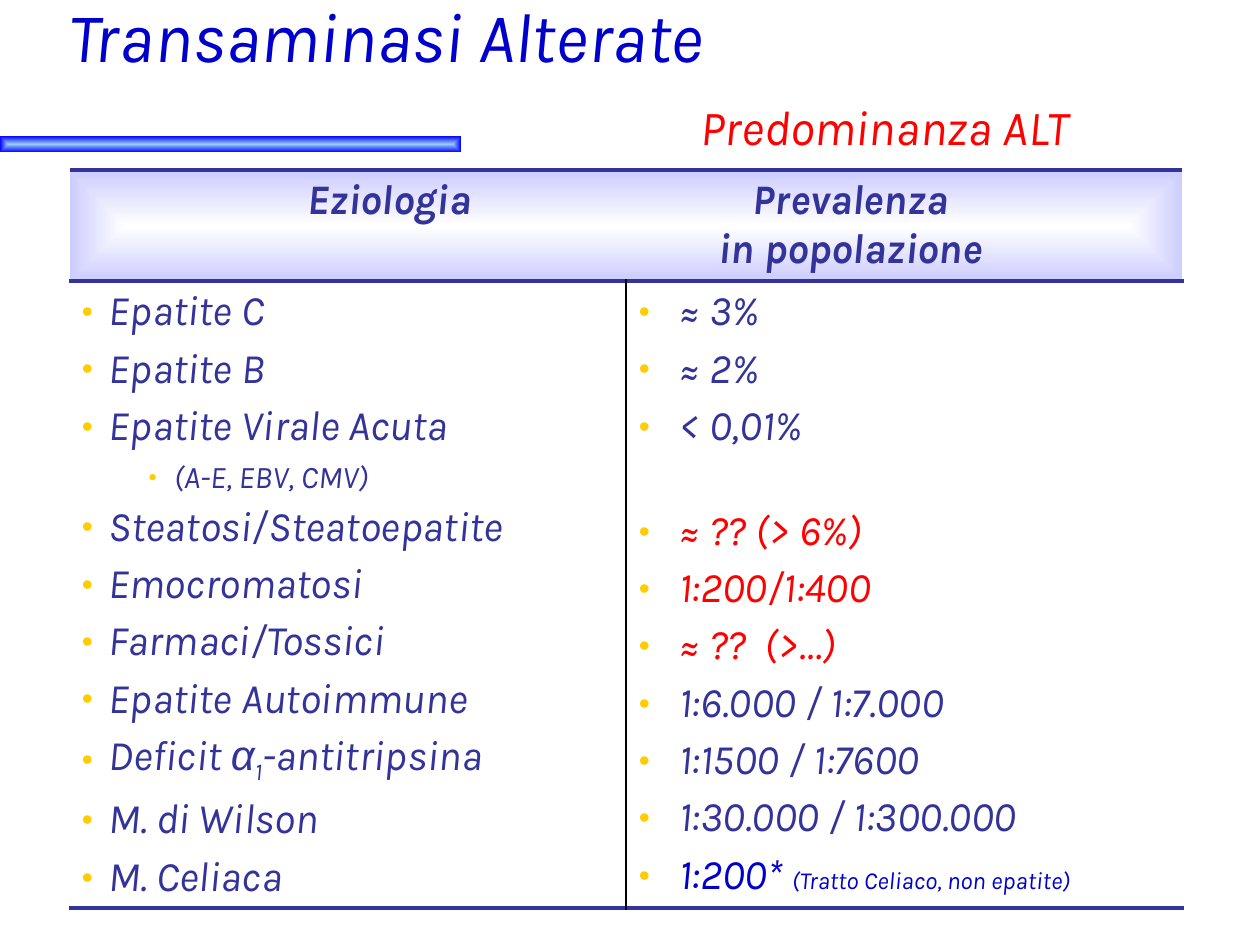
from lxml import etree
from pptx import Presentation
from pptx import util as u
from pptx.dml.color import RGBColor
from pptx.enum import shapes, text
from pptx.oxml import ns

NAVY, BLUE, RED, GOLD = "333399", "0000CC", "FF0000", "FFCC00"
FONT, SIZE = "Karla", 24

TITLE = [("Transaminasi Alterate", 40, BLUE), ("\t", 40, BLUE), ("Predominanza ALT", 28, RED)]
HEADER = ["\tEziologia\tPrevalenza", "\t\tin popolazione"]
HEADER_TABS = [2.44, 6.1]
CAUSES = [
    [("Epatite C", {})],
    [("Epatite B", {})],
    [("Epatite Virale Acuta", {})],
    [("(A-E, EBV, CMV)", {"size": 18})],
    [("Steatosi/Steatoepatite", {})],
    [("Emocromatosi", {})],
    [("Farmaci/Tossici", {})],
    [("Epatite Autoimmune", {})],
    [("Deficit ", {}), ("α", {"font": "Arial"}), ("1", {"baseline": -25000}), ("-antitripsina", {})],
    [("M. di Wilson", {})],
    [("M. Celiaca", {})],
]
RATES = [
    [("≈ 3%", {})],
    [("≈ 2%", {})],
    [("< 0,01%", {})],
    [("≈ ?? (> 6%)", {"color": RED})],
    [("1:200/1:400", {"color": RED})],
    [("≈ ??  (>…)", {"color": RED})],
    [("1:6.000 / 1:7.000", {})],
    [("1:1500 / 1:7600", {})],
    [("1:30.000 / 1:300.000", {})],
    [("1:200* ", {"color": BLUE}), ("(Tratto Celiaco, non epatite)", {"color": BLUE, "size": 14})],
]
SUBITEM, AFTER_GAP, GAP = 3, 3, 31.9


def add(parent, tag, **attributes):
    """Append a DrawingML child element and return it."""
    child = etree.SubElement(parent, ns.qn(tag))
    for name, value in attributes.items():
        child.set(name, str(value))
    return child


def add_span(para, words, size=SIZE, color=NAVY, font=FONT, bold=False, baseline=0):
    """Add one formatted italic run to a paragraph."""
    span = para.add_run()
    span.text = words
    span.font.size, span.font.name = u.Pt(size), font
    span.font.bold, span.font.italic = bold, True
    span.font.color.rgb = RGBColor.from_string(color)
    if baseline:
        span.font._element.set("baseline", str(baseline))


def set_tabs(para, stops, align):
    """Give a paragraph tab stops at the listed inches."""
    tabs = add(para._p.get_or_add_pPr(), "a:tabLst")
    for stop in stops:
        add(tabs, "a:tab", pos=u.Inches(stop), algn=align)


def fill_gradient(target, properties, inner, outer):
    """Fill a shape or cell with a gradient running from centre to edges."""
    target.fill.background()
    blank = properties.find(ns.qn("a:noFill"))
    gradient = etree.Element(ns.qn("a:gradFill"), rotWithShape="1")
    stops = add(gradient, "a:gsLst")
    for position, color in ((0, inner), (100000, outer)):
        add(add(stops, "a:gs", pos=position), "a:srgbClr", val=color)
    sides = dict.fromkeys("ltrb", 50000)
    add(add(gradient, "a:path", path="shape"), "a:fillToRect", **sides)
    properties.replace(blank, gradient)


def set_borders(cell, borders):
    """Draw cell borders given as (side, colour, points) in L, R, T, B order."""
    properties = cell._tc.get_or_add_tcPr()
    for index, (side, color, points) in enumerate(borders):
        line = add(properties, f"a:ln{side}", w=u.Pt(points))
        add(add(line, "a:solidFill"), "a:srgbClr", val=color)
        properties.insert(index, line)


def set_bullet(para, left, hang):
    """Give a paragraph a gold hanging bullet."""
    properties = para._p.get_or_add_pPr()
    properties.set("marL", str(u.Inches(left)))
    properties.set("indent", str(-u.Inches(hang)))
    add(add(properties, "a:buClr"), "a:srgbClr", val=GOLD)
    add(properties, "a:buSzPct", val=75000)
    add(properties, "a:buFont", typeface="Arial")
    add(properties, "a:buChar", char="•")


def paragraphs(frame, count):
    """Return the requested number of paragraphs of a text frame."""
    return [frame.paragraphs[0]] + [frame.add_paragraph() for _ in range(count - 1)]


def add_title(page):
    """Place the two-line title."""
    title = page.shapes.title
    title.left, title.top = u.Inches(0.44), u.Inches(0.49)
    title.width, title.height = u.Inches(9.14), u.Inches(0.83)
    frame = title.text_frame
    frame.auto_size = text.MSO_AUTO_SIZE.NONE
    frame.vertical_anchor = text.MSO_ANCHOR.BOTTOM
    para = frame.paragraphs[0]
    para.alignment = text.PP_ALIGN.LEFT
    set_tabs(para, [5.02], "l")
    for index, (words, size, color) in enumerate(TITLE):
        if index == 1:
            para.add_line_break()
        add_span(para, words, size, color)


def add_bar(page):
    """Draw the accent bar under the title."""
    bar = page.shapes.add_shape(
        shapes.MSO_SHAPE.RECTANGLE, u.Inches(0), u.Inches(1.08), u.Inches(3.66), u.Inches(0.13))
    bar.shadow.inherit = False
    bar.line.fill.background()
    fill_gradient(bar, bar._element.spPr, "99CCFF", "0000FF")


def add_table(page):
    """Build the table of causes and prevalence."""
    table = page.shapes.add_table(
        2, 2, u.Inches(0.55), u.Inches(1.35), u.Inches(8.84), u.Inches(5.85)).table
    table.first_row = table.horz_banding = False
    table.rows[0].height, table.rows[1].height = u.Inches(0.88), u.Inches(4.97)
    rules = [("T", NAVY, 3), ("B", NAVY, 3)]

    header = table.cell(0, 0)
    header.merge(table.cell(0, 1))
    for cell in table.rows[0].cells:
        fill_gradient(cell, cell._tc.get_or_add_tcPr(), "FFFFFF", "CCCCFF")
        set_borders(cell, rules)
    for para, words in zip(paragraphs(header.text_frame, len(HEADER)), HEADER):
        set_tabs(para, HEADER_TABS, "ctr")
        add_span(para, words, bold=True)

    for column, (items, divider) in enumerate(((CAUSES, "R"), (RATES, "L"))):
        cell = table.cell(1, column)
        cell.fill.background()
        set_borders(cell, [(divider, "000000", 1)] + rules)
        for index, (para, spans) in enumerate(zip(paragraphs(cell.text_frame, len(items)), items)):
            gap = 0.2 * spans[0][1].get("size", SIZE)
            if column == 0:
                para.space_after = u.Pt(gap)
                set_bullet(para, *((0.73, 0.2) if index == SUBITEM else (0.21, 0.21)))
            else:
                para.space_before = u.Pt(GAP if index == AFTER_GAP else gap)
                set_bullet(para, 0.32, 0.32)
            for words, style in spans:
                add_span(para, words, **style)


def main():
    """Build and save the slide."""
    deck = Presentation()
    deck.slide_width, deck.slide_height = u.Inches(10), u.Inches(7.5)
    page = deck.slides.add_slide(deck.slide_layouts[5])
    add_bar(page)
    add_title(page)
    add_table(page)
    deck.save("out.pptx")


if __name__ == "__main__":
    main()
